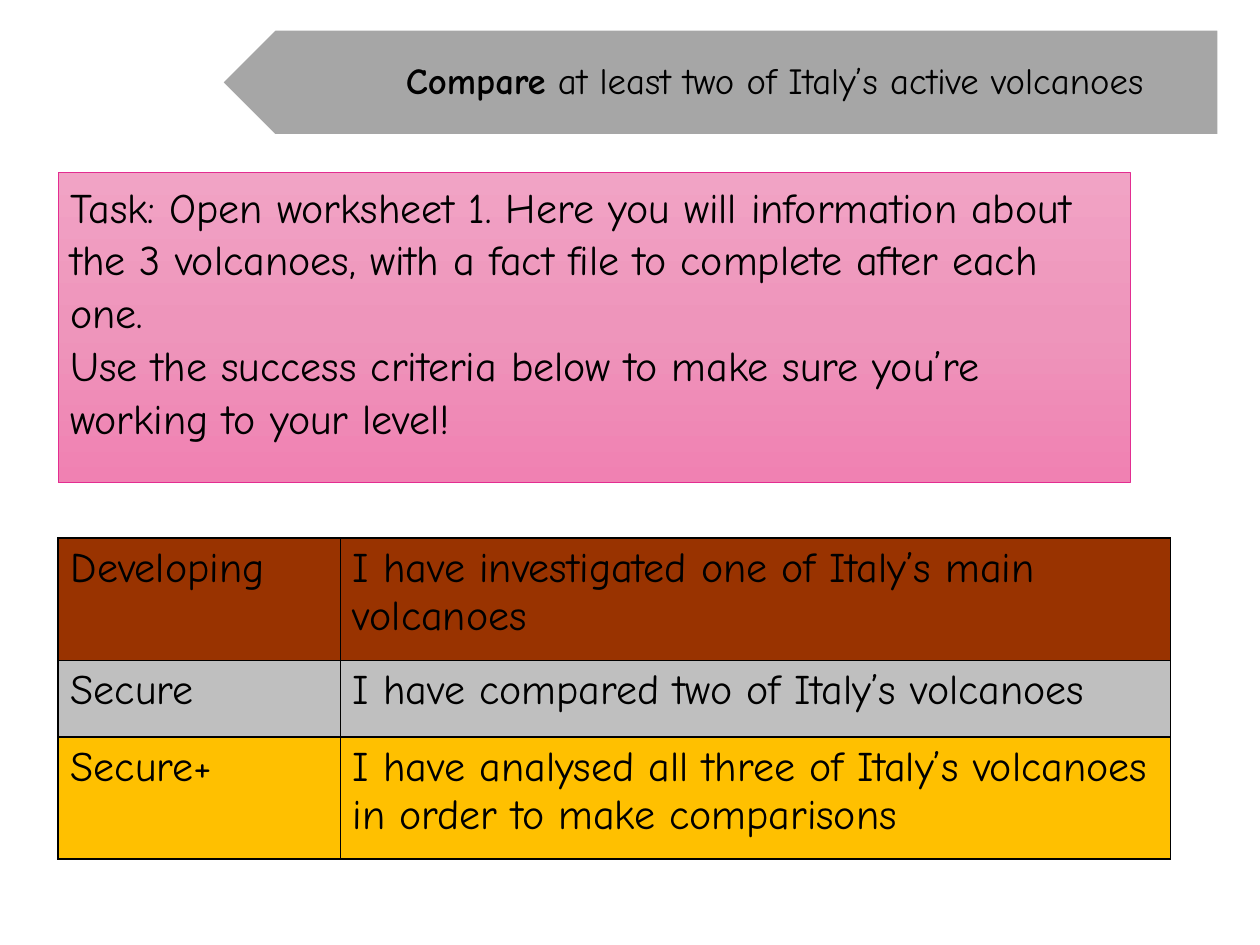
from copy import deepcopy
from dataclasses import dataclass
from typing import Any

from lxml.etree import SubElement
from pptx import Presentation
from pptx.dml.color import RGBColor
from pptx.enum.shapes import MSO_SHAPE
from pptx.enum.text import MSO_ANCHOR, PP_ALIGN
from pptx.oxml.ns import qn
from pptx.util import Cm, Pt

COLOURS = {
    "ink": "000000",
    "banner": "A6A6A6",
    "banner_edge": "FFFFFF",
    "task_top": "F1A3C5",
    "task_middle": "EE95BB",
    "task_bottom": "F081B2",
    "task_edge": "E32D91",
    "bronze": "993300",
    "silver": "BFBFBF",
    "gold": "FFC000",
}
FONT = "Comic Neue"
BODY_FONT = {"name": FONT, "size": Pt(24), "bold": False}
TITLE_FONT = {"name": FONT, "size": Pt(21), "bold": False}


@dataclass
class Criterion:
    level: str
    statement: str
    colour: str
    height: float


CRITERIA = [
    Criterion("Developing", "I have investigated one of Italy’s main volcanoes", "bronze", 2.46),
    Criterion("Secure", "I have compared two of Italy’s volcanoes", "silver", 1.55),
    Criterion("Secure+", "I have analysed all three of Italy’s volcanoes in order to make comparisons", "gold", 2.46),
]
TASK = [
    "Task: Open worksheet 1. Here you will information about the 3 volcanoes, with a fact file to complete after each one.",
    "Use the success criteria below to make sure you’re working to your level!",
]
COLUMN_WIDTHS = (5.69, 16.74)
MARGIN_LEFT = 1.17


def rgb(name: str) -> RGBColor:
    return RGBColor.from_string(COLOURS[name])


def apply_format(target: Any, values: dict[str, Any]) -> None:
    for attribute, value in values.items():
        setattr(target, attribute, value)


def add_words(paragraph: Any, words: str, font: dict[str, Any]) -> None:
    run = paragraph.add_run()
    run.text = words
    apply_format(run.font, font)
    run.font.color.rgb = rgb("ink")


def draw_banner(slide: Any) -> None:
    banner = slide.shapes.add_group_shape()
    arrow = banner.shapes.add_shape(MSO_SHAPE.PENTAGON, Cm(4.48), Cm(0.6), Cm(20.08), Cm(2.12))
    arrow.rotation = 180
    arrow.shadow.inherit = False
    arrow.fill.solid()
    arrow.fill.fore_color.rgb = rgb("banner")
    arrow.line.color.rgb = rgb("banner_edge")
    arrow.line.width = Pt(1)

    objective = banner.shapes.add_textbox(Cm(5.62), Cm(0.6), Cm(18.93), Cm(2.12)).text_frame
    apply_format(objective, {
        "word_wrap": True,
        "vertical_anchor": MSO_ANCHOR.MIDDLE,
        "margin_left": Cm(1.47),
        "margin_right": Cm(0.41),
        "margin_top": Cm(0.23),
        "margin_bottom": Cm(0.23),
    })
    sentence = objective.paragraphs[0]
    apply_format(sentence, {"alignment": PP_ALIGN.CENTER, "line_spacing": 0.9})
    add_words(sentence, "Compare", TITLE_FONT | {"bold": True})
    add_words(sentence, " at least two of Italy’s active volcanoes", TITLE_FONT)


def fill_task_gradient(panel: Any) -> None:
    panel.fill.gradient()
    panel.fill.gradient_angle = 270
    stop_list = panel._element.spPr.find(qn("a:gradFill")).find(qn("a:gsLst"))
    stop_list.insert(1, deepcopy(stop_list[0]))
    shades = ("task_top", "task_middle", "task_bottom")
    for stop, shade, position in zip(panel.fill.gradient_stops, shades, (0, 0.5, 1)):
        stop.color.rgb = rgb(shade)
        stop.position = position


def draw_task(slide: Any) -> None:
    panel = slide.shapes.add_shape(MSO_SHAPE.RECTANGLE, Cm(MARGIN_LEFT), Cm(3.48), Cm(21.62), Cm(6.25))
    panel.shadow.inherit = False
    fill_task_gradient(panel)
    panel.line.color.rgb = rgb("task_edge")
    panel.line.width = Pt(0.5)
    instructions = panel.text_frame
    apply_format(instructions, {
        "word_wrap": True,
        "vertical_anchor": MSO_ANCHOR.TOP,
        "margin_top": Cm(0.12),
    })
    for index, sentence in enumerate(TASK):
        paragraph = instructions.add_paragraph() if index else instructions.paragraphs[0]
        apply_format(paragraph, {"alignment": PP_ALIGN.LEFT, "line_spacing": 1.05})
        add_words(paragraph, sentence, BODY_FONT)


def draw_cell(cell: Any, words: str, colour: str) -> None:
    add_words(cell.text_frame.paragraphs[0], words, BODY_FONT)
    properties = cell._tc.get_or_add_tcPr()
    for side in ("a:lnL", "a:lnR", "a:lnT", "a:lnB"):
        border = SubElement(properties, qn(side), w=str(Pt(1)))
        SubElement(SubElement(border, qn("a:solidFill")), qn("a:srgbClr"), val=COLOURS["ink"])
    cell.fill.solid()
    cell.fill.fore_color.rgb = rgb(colour)


def draw_criteria(slide: Any) -> None:
    heights = [criterion.height for criterion in CRITERIA]
    table = slide.shapes.add_table(
        len(CRITERIA), len(COLUMN_WIDTHS),
        Cm(MARGIN_LEFT), Cm(10.85), Cm(sum(COLUMN_WIDTHS)), Cm(sum(heights)),
    ).table
    apply_format(table, {"first_row": False, "horz_banding": False})
    for column, width in zip(table.columns, COLUMN_WIDTHS):
        column.width = Cm(width)
    for row, criterion in zip(table.rows, CRITERIA):
        row.height = Cm(criterion.height)
        for cell, words in zip(row.cells, (criterion.level, criterion.statement)):
            draw_cell(cell, words, criterion.colour)


def main() -> None:
    presentation = Presentation()
    apply_format(presentation, {"slide_width": Cm(25.4), "slide_height": Cm(19.05)})
    slide = presentation.slides.add_slide(presentation.slide_layouts[6])
    draw_criteria(slide)
    draw_banner(slide)
    draw_task(slide)
    presentation.save("out.pptx")


if __name__ == "__main__":
    main()
